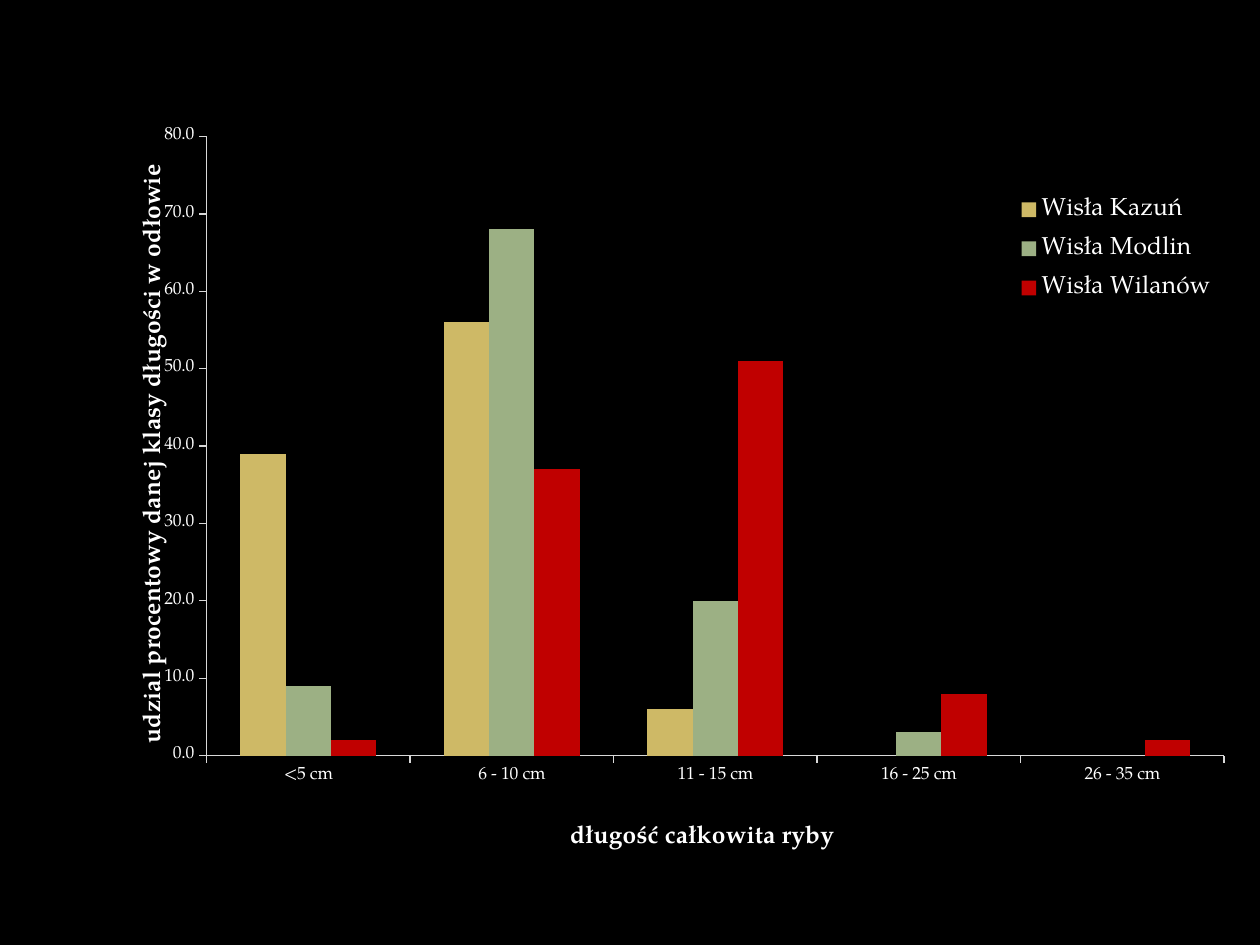
"""Build a slide with a chart of fish length classes at three Vistula sites."""
from dataclasses import dataclass
from typing import Optional

from lxml.etree import SubElement
from pptx import Presentation
from pptx.chart.data import CategoryChartData
from pptx.dml.color import RGBColor
from pptx.enum.chart import XL_CHART_TYPE, XL_LEGEND_POSITION, XL_TICK_MARK
from pptx.oxml.ns import qn
from pptx.util import Cm, Pt


@dataclass(frozen=True)
class Theme:
    background: str = "000000"
    text: str = "FFFFFF"
    axis: str = "D9D9D9"
    font: str = "TeX Gyre Pagella"
    label_size: int = 10
    title_size: int = 14


@dataclass(frozen=True)
class Site:
    name: str
    shares: tuple[Optional[float], ...]
    color: str


@dataclass(frozen=True)
class Frame:
    x: float
    y: float
    w: Optional[float] = None
    h: Optional[float] = None


THEME = Theme()
LENGTH_CLASSES = ("<5 cm", "6 - 10 cm", "11 - 15 cm", "16 - 25 cm", "26 - 35 cm")
SITES = (
    Site("Wisła Kazuń", (39, 56, 6, None, None), "CEB966"),
    Site("Wisła Modlin", (9, 68, 20, 3, None), "9CB084"),
    Site("Wisła Wilanów", (2, 37, 51, 8, 2), "C00000"),
)


def style_font(font, size: int, bold: bool = False) -> None:
    font.name = THEME.font
    font.size = Pt(size)
    font.bold = bold
    font.color.rgb = RGBColor.from_string(THEME.text)


def place(element, frame: Frame, index: int, inner: bool = False) -> None:
    for previous in element.findall(qn("c:layout")):
        element.remove(previous)
    layout = SubElement(element, qn("c:layout"))
    element.insert(index, layout)
    manual = SubElement(layout, qn("c:manualLayout"))
    settings = [("layoutTarget", "inner")] if inner else []
    settings += [("xMode", "edge"), ("yMode", "edge")]
    settings += [(key, getattr(frame, key)) for key in ("x", "y", "w", "h")]
    for tag, value in settings:
        if value is not None:
            SubElement(manual, qn(f"c:{tag}")).set("val", str(value))


def add_axis_title(axis, text: str, *, size: int, bold: bool, frame: Frame) -> None:
    title = axis.axis_title
    title.text_frame.text = text
    style_font(title.text_frame.paragraphs[0].runs[0].font, size, bold)
    place(title._element, frame, 1)


def style_axis(axis) -> None:
    axis.has_major_gridlines = False
    axis.major_tick_mark = XL_TICK_MARK.OUTSIDE
    axis.minor_tick_mark = XL_TICK_MARK.NONE
    axis.format.line.color.rgb = RGBColor.from_string(THEME.axis)
    axis.format.line.width = Pt(0.75)
    style_font(axis.tick_labels.font, THEME.label_size)


def add_length_chart(slide) -> None:
    shares = CategoryChartData(number_format="0.0")
    shares.categories = LENGTH_CLASSES
    for site in SITES:
        shares.add_series(site.name, site.shares)
    chart = slide.shapes.add_chart(
        XL_CHART_TYPE.COLUMN_CLUSTERED, Cm(1.27), Cm(2.13), Cm(24.13), Cm(15.6), shares
    ).chart
    chart.has_title = False
    style_font(chart.font, THEME.label_size)

    columns = chart.plots[0]
    columns.vary_by_categories = False
    columns.gap_width = 150
    columns.overlap = 0
    for series, site in zip(columns.series, SITES):
        series.format.fill.solid()
        series.format.fill.fore_color.rgb = RGBColor.from_string(site.color)
    place(chart._chartSpace.chart.plotArea, Frame(0.12, 0.04, 0.85, 0.8), 0, inner=True)

    length_axis, share_axis = chart.category_axis, chart.value_axis
    style_axis(length_axis)
    style_axis(share_axis)
    share_axis.minimum_scale, share_axis.maximum_scale = 0, 80
    share_axis.major_unit = 10
    share_axis.tick_labels.number_format = "0.0"
    share_axis.tick_labels.number_format_is_linked = False
    add_axis_title(length_axis, "długość całkowita ryby",
                   size=THEME.title_size, bold=True, frame=Frame(0.42, 0.92))
    add_axis_title(share_axis, "udzial procentowy danej klasy długości w odłowie",
                   size=THEME.title_size, bold=True, frame=Frame(0.06, 0.07))

    chart.has_legend = True
    chart.legend.position = XL_LEGEND_POSITION.RIGHT
    chart.legend.include_in_layout = False
    style_font(chart.legend.font, THEME.title_size)
    place(chart.legend._element, Frame(0.79, 0.1, 0.18, 0.17), 1)


def main() -> None:
    deck = Presentation()
    deck.slide_width, deck.slide_height = Cm(25.4), Cm(19.05)
    slide = deck.slides.add_slide(deck.slide_layouts[6])
    slide.background.fill.solid()
    slide.background.fill.fore_color.rgb = RGBColor.from_string(THEME.background)
    add_length_chart(slide)
    deck.save("out.pptx")


if __name__ == "__main__":
    main()
